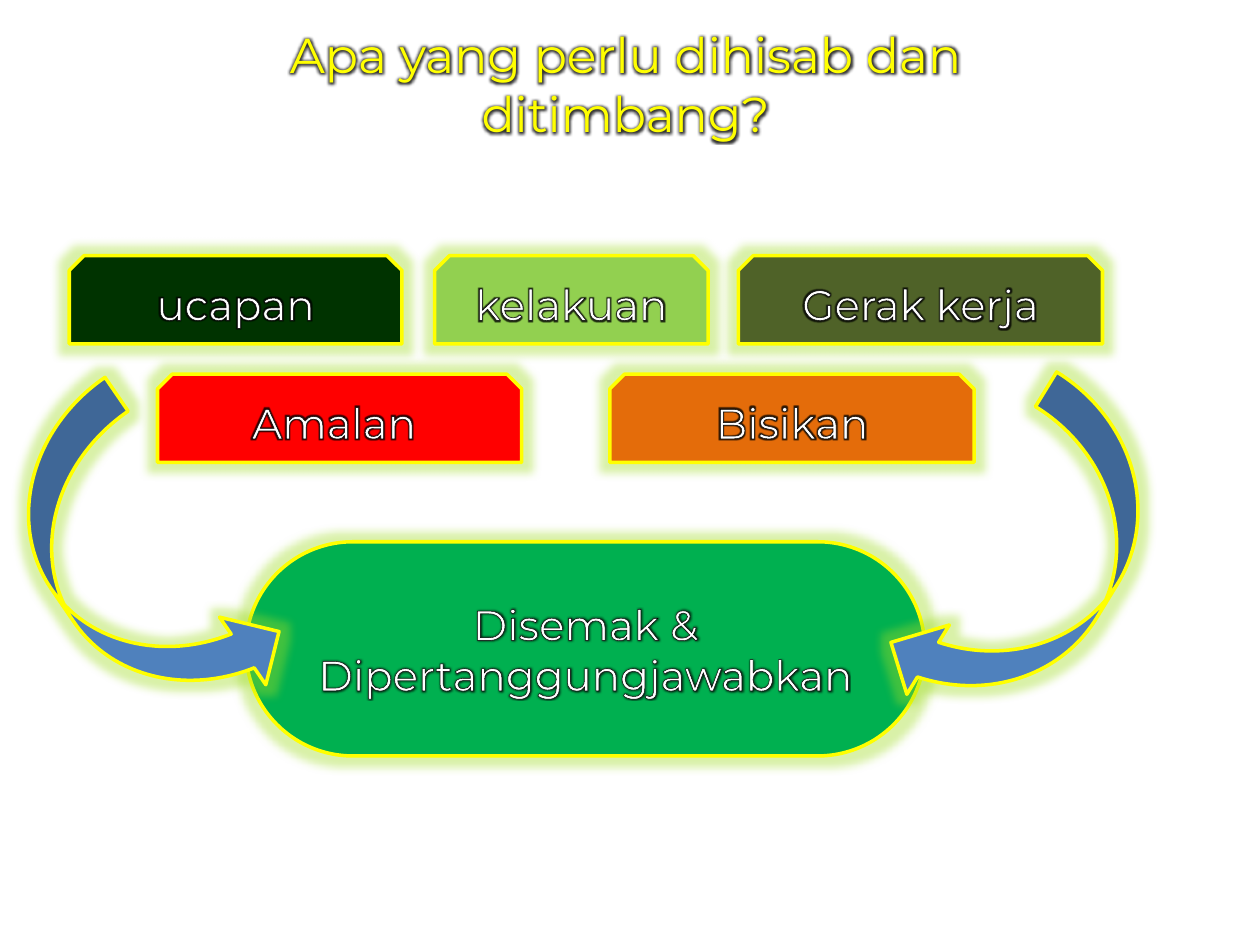
import lxml.etree
import pptx
import pptx.dml.color
import pptx.enum.shapes
import pptx.enum.text
import pptx.oxml.ns
import pptx.util

FONT = "Montserrat"
YELLOW = "FFFF00"
ARROW_BLUE = "4F81BD"
CARD_HEIGHT = 0.7
SHAPES = pptx.enum.shapes.MSO_SHAPE
CARD_ROWS = [
    (2.03, [
        ("ucapan", 0.55, 2.64, "003300"),
        ("kelakuan", 3.45, 2.17, "92D050"),
        ("Gerak kerja", 5.86, 2.89, "4F6228"),
    ]),
    (2.97, [
        ("Amalan ", 1.25, 2.89, "FF0000"),
        ("Bisikan", 4.84, 2.89, "E46C0A"),
    ]),
]


def color(value):
    """Return the RGB colour for a hex string."""
    return pptx.dml.color.RGBColor.from_string(value)


def add_element(parent, tag, **attributes):
    """Append a drawing element to a parent and return it."""
    return lxml.etree.SubElement(parent, pptx.oxml.ns.qn(tag), attributes)


def add_glow(properties, radius, value, opacity):
    """Append a soft glow to shape or run properties and return its list."""
    effects = add_element(properties, "a:effectLst")
    glow = add_element(effects, "a:glow", rad=str(pptx.util.Inches(radius)))
    rgb = add_element(glow, "a:srgbClr", val=value)
    add_element(rgb, "a:alpha", val=str(opacity * 1000))
    return effects


def outline_run(run):
    """Give a run a thin black outline and a dark glow."""
    properties = run.font.fill._xPr
    line = add_element(properties, "a:ln", w=str(pptx.util.Pt(0.75)))
    fill = add_element(line, "a:solidFill")
    add_element(fill, "a:srgbClr", val="000000")
    properties.insert(0, line)
    effects = add_glow(properties, 0.04, "000000", 80)
    properties.insert(2, effects)


def write_text(shape, text, size, value):
    """Write centred outlined text in a shape."""
    frame = shape.text_frame
    frame.text = text
    frame.word_wrap = True
    frame.auto_size = pptx.enum.text.MSO_AUTO_SIZE.NONE
    frame.vertical_anchor = pptx.enum.text.MSO_ANCHOR.MIDDLE
    paragraph = frame.paragraphs[0]
    paragraph.alignment = pptx.enum.text.PP_ALIGN.CENTER
    for run in paragraph.runs:
        run.font.name = FONT
        run.font.size = pptx.util.Pt(size)
        run.font.color.rgb = color(value)
        outline_run(run)


def add_glowing_shape(slide, kind, box, fill):
    """Add a filled shape with a yellow line and a green glow."""
    shape = slide.shapes.add_shape(kind, *map(pptx.util.Inches, box))
    shape.fill.solid()
    shape.fill.fore_color.rgb = color(fill)
    shape.line.color.rgb = color(YELLOW)
    shape.line.width = pptx.util.Pt(2)
    add_glow(shape._element.spPr, 0.14, "A0DC26", 40)
    return shape


def add_title(slide, text):
    """Place and format the title."""
    title = slide.shapes.title
    title.left, title.top, title.width, title.height = map(
        pptx.util.Inches, (1.33, 0.23, 7.27, 0.86))
    write_text(title, text, 28, YELLOW)


def add_label(slide, kind, box, fill, text):
    """Add a glowing shape with white text."""
    shape = add_glowing_shape(slide, kind, box, fill)
    write_text(shape, text, 24, "FFFFFF")
    return shape


def add_arrow(slide, box, rotation, mirrored=False):
    """Add a curved arrow that leads to the result."""
    arrow = add_glowing_shape(slide, SHAPES.CURVED_RIGHT_ARROW, box, ARROW_BLUE)
    arrow.rotation = rotation
    if mirrored:
        arrow._element.spPr.xfrm.set("flipH", "1")


def main():
    """Build and save the slide."""
    presentation = pptx.Presentation()
    presentation.slide_width = pptx.util.Inches(10)
    presentation.slide_height = pptx.util.Inches(7.5)
    slide = presentation.slides.add_slide(presentation.slide_layouts[5])
    add_title(slide, "Apa yang perlu dihisab dan ditimbang?")
    for top, cards in CARD_ROWS:
        for text, left, width, fill in cards:
            add_label(slide, SHAPES.SNIP_2_SAME_RECTANGLE,
                      (left, top, width, CARD_HEIGHT), fill, text)
    result = add_label(slide, SHAPES.ROUNDED_RECTANGLE, (1.95, 4.3, 5.39, 1.7),
                       "00B050", "Disemak & Dipertanggungjawabkan")
    result.adjustments[0] = 0.5
    add_arrow(slide, (7.55, 3.08, 1.29, 2.84), 31.5, mirrored=True)
    add_arrow(slide, (0.43, 3.12, 1.3, 2.77), 325.6)
    presentation.save("out.pptx")


if __name__ == "__main__":
    main()
